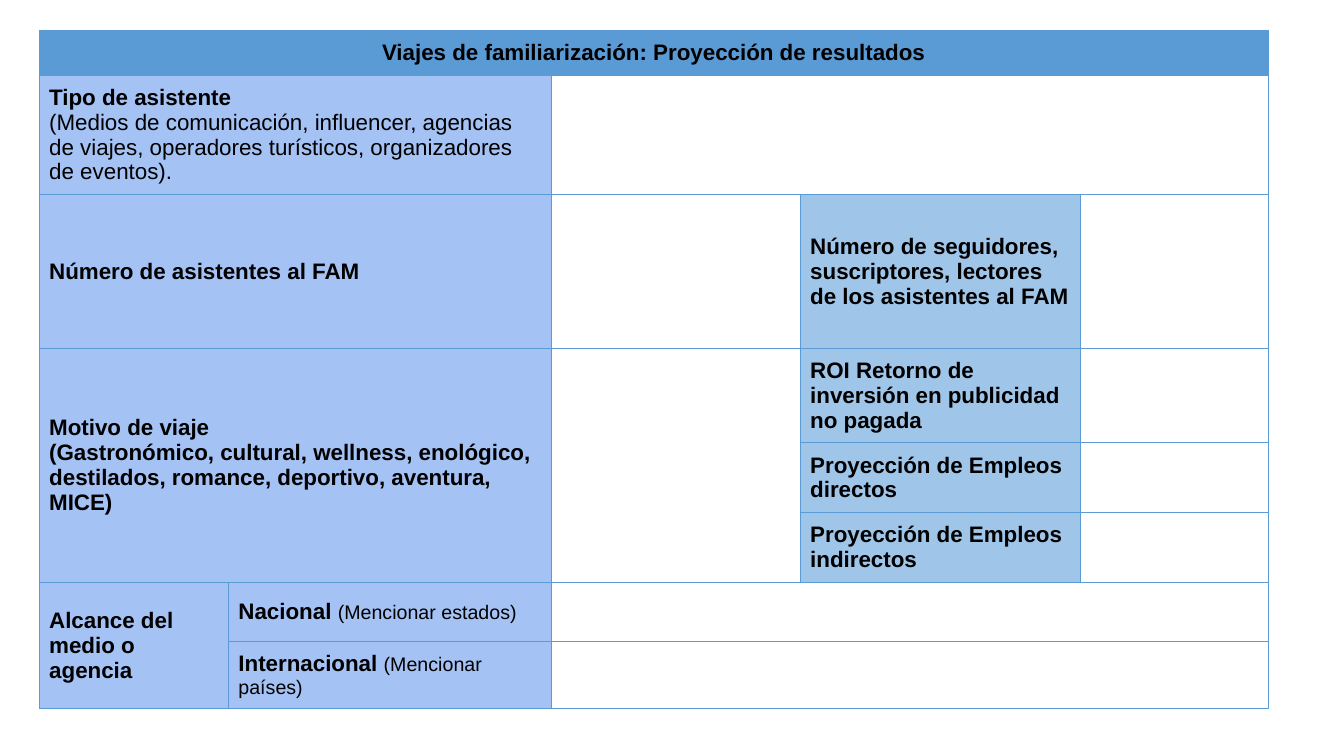
from lxml import etree
from pptx import Presentation
from pptx.dml.color import RGBColor
from pptx.enum.text import MSO_ANCHOR, PP_ALIGN
from pptx.oxml.ns import qn
from pptx.util import Cm, Pt

BLUE, LAVENDER, SKY, WHITE = "5B9BD5", "A4C2F4", "9FC5E8", "FFFFFF"
COLUMN_WIDTHS = [4.77, 8.13, 6.28, 7.07, 4.72]
ROW_HEIGHTS = [1.13, 3.02, 3.86, 2.39, 1.76, 1.76, 1.49, 1.69]

# First row, first column, last row, last column
MERGES = [
    (0, 0, 0, 4),
    (1, 0, 1, 1), (1, 2, 1, 4),
    (2, 0, 2, 1),
    (3, 0, 5, 1), (3, 2, 5, 2),
    (6, 0, 7, 0), (6, 2, 6, 4), (7, 2, 7, 4),
]

# Each label is a list of paragraphs; each paragraph is a list of (text, size, bold)
LABELS = {
    (0, 0): (BLUE, [[("Viajes de familiarización: Proyección de resultados", 16, True)]]),
    (1, 0): (LAVENDER, [
        [("Tipo de asistente", 16, True)],
        [("(Medios de comunicación, influencer, agencias de viajes, "
          "operadores turísticos, organizadores de eventos).", 16, False)],
    ]),
    (2, 0): (LAVENDER, [[("Número de asistentes al FAM", 16, True)]]),
    (2, 3): (SKY, [[("Número de seguidores, suscriptores, lectores "
                     "de los asistentes al FAM", 16, True)]]),
    (3, 0): (LAVENDER, [
        [("Motivo de viaje", 16, True)],
        [("(Gastronómico, cultural, wellness, enológico, destilados, "
          "romance, deportivo, aventura, MICE)", 16, True)],
    ]),
    (3, 3): (SKY, [[("ROI Retorno de inversión en publicidad no pagada", 16, True)]]),
    (4, 3): (SKY, [[("Proyección de Empleos directos", 16, True)]]),
    (5, 3): (SKY, [[("Proyección de Empleos indirectos", 16, True)]]),
    (6, 0): (LAVENDER, [[("Alcance del medio o agencia", 16, True)]]),
    (6, 1): (LAVENDER, [[("Nacional ", 16, True), ("(Mencionar estados)", 14, False)]]),
    (7, 1): (LAVENDER, [[("Internacional ", 16, True), ("(Mencionar países)", 14, False)]]),
}


def write_text(para, text, *, size, bold, color="000000", font="Arial"):
    span = para.add_run()
    span.text = text
    span.font.name = font
    span.font.size = Pt(size)
    span.font.bold = bold
    span.font.color.rgb = RGBColor.from_string(color)


def paint_cell(cell, fill, border):
    """Give the cell a solid fill and a thin line on all four sides."""
    properties = cell._tc.get_or_add_tcPr()
    for side in ("a:lnL", "a:lnR", "a:lnT", "a:lnB"):
        line = etree.SubElement(properties, qn(side), w=str(Pt(0.75)))
        solid = etree.SubElement(line, qn("a:solidFill"))
        etree.SubElement(solid, qn("a:srgbClr"), val=border)
    cell.fill.solid()
    cell.fill.fore_color.rgb = RGBColor.from_string(fill)


deck = Presentation()
deck.slide_width, deck.slide_height = Cm(33.87), Cm(19.05)
page = deck.slides.add_slide(deck.slide_layouts[6])

table = page.shapes.add_table(
    len(ROW_HEIGHTS), len(COLUMN_WIDTHS), Cm(0.99), Cm(0.76),
    Cm(sum(COLUMN_WIDTHS)), Cm(sum(ROW_HEIGHTS)),
).table
table.first_row = False
table.horz_banding = False
for column, width in zip(table.columns, COLUMN_WIDTHS):
    column.width = Cm(width)
for row, height in zip(table.rows, ROW_HEIGHTS):
    row.height = Cm(height)

for top, left, bottom, right in MERGES:
    table.cell(top, left).merge(table.cell(bottom, right))

for row in range(len(ROW_HEIGHTS)):
    for column in range(len(COLUMN_WIDTHS)):
        cell = table.cell(row, column)
        fill, paragraphs = LABELS.get((row, column), (WHITE, []))
        paint_cell(cell, fill, BLUE)
        cell.vertical_anchor = MSO_ANCHOR.MIDDLE
        cell.margin_left = cell.margin_right = Cm(0.25)
        cell.margin_top = cell.margin_bottom = Cm(0.25)
        for index, spans in enumerate(paragraphs):
            frame = cell.text_frame
            para = frame.add_paragraph() if index else frame.paragraphs[0]
            para.alignment = PP_ALIGN.LEFT if row else PP_ALIGN.CENTER
            for text, size, bold in spans:
                write_text(para, text, size=size, bold=bold)

deck.save("out.pptx")
